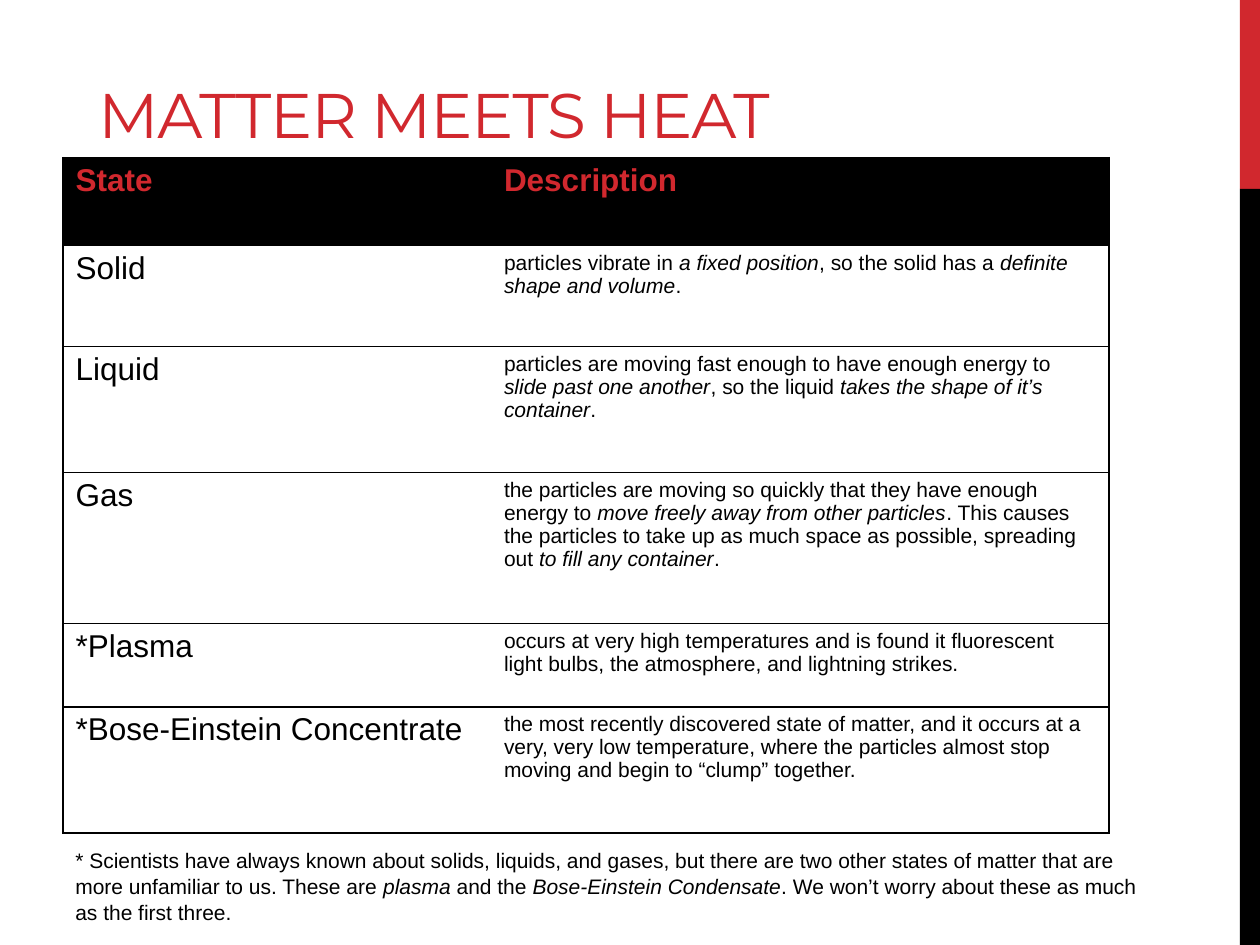
import pptx
import pptx.dml.color
import pptx.enum.shapes
import pptx.enum.text
import pptx.oxml
import pptx.oxml.ns
import pptx.util

Inches = pptx.util.Inches
RED, BLACK = "D1282E", "000000"
COLS = [3.4, 4.9]
ROWS = [
    (0.7, "State", "Description"),
    (0.8, "Solid", "particles vibrate in _a fixed position_, so the solid has a "
     "_definite shape and volume_."),
    (1, "Liquid", "particles are moving fast enough to have enough energy to "
     "_slide past one another_, so the liquid _takes the shape of it’s container_."),
    (1.2, "Gas", "the particles are moving so quickly that they have enough energy to "
     "_move freely away from other particles_. This causes the particles to take up "
     "as much space as possible, spreading out _to fill any container_."),
    (0.66, "*Plasma", "occurs at very high temperatures and is found it fluorescent "
     "light bulbs, the atmosphere, and lightning strikes."),
    (1, "*Bose-Einstein Concentrate", "the most recently discovered state of matter, "
     "and it occurs at a very, very low temperature, where the particles almost stop "
     "moving and begin to “clump” together."),
]
NOTE = ("* Scientists have always known about solids, liquids, and gases, but there are "
        "two other states of matter that are more unfamiliar to us. These are _plasma_ "
        "and the _Bose-Einstein Condensate_. We won’t worry about these as much as the "
        "first three.")


def color(code):
    return pptx.dml.color.RGBColor.from_string(code)


def write(frame, text, size=12, font="Arial", fill=BLACK, bold=False, gap=None, track=None):
    frame.word_wrap = True
    para = frame.paragraphs[0]
    para.alignment = pptx.enum.text.PP_ALIGN.LEFT
    para.line_spacing = gap
    for i, part in enumerate(text.split("_")):
        run = para.add_run()
        run.text = part
        run.font.size = pptx.util.Pt(size)
        run.font.name = font
        run.font.bold = bold
        run.font.italic = i % 2 == 1
        run.font.color.rgb = color(fill)
        if track is not None:
            run.font._element.set("spc", str(track))


def place(shape, left, top, width, height):
    shape.left, shape.top = Inches(left), Inches(top)
    shape.width, shape.height = Inches(width), Inches(height)


def bar(slide, top, height, fill):
    kind = pptx.enum.shapes.MSO_SHAPE.RECTANGLE
    shape = slide.shapes.add_shape(kind, Inches(9.84), Inches(top), Inches(0.16), Inches(height))
    shape.shadow.inherit = False
    shape.fill.solid()
    shape.fill.fore_color.rgb = color(fill)
    shape.line.fill.background()


def title(slide, text):
    shape = slide.shapes.title
    place(shape, 0.68, 0.42, 6.25, 0.83)
    frame = shape.text_frame
    frame.auto_size = pptx.enum.text.MSO_AUTO_SIZE.NONE
    frame.vertical_anchor = pptx.enum.text.MSO_ANCHOR.BOTTOM
    write(frame, text, size=36, font="Montserrat", fill=RED, track=-60)


def edge(cell, sides):
    props = cell._tc.get_or_add_tcPr()
    for side in "LRTB":
        if side in sides:
            paint = f'<a:solidFill><a:srgbClr val="{BLACK}"/></a:solidFill>'
        else:
            paint = "<a:noFill/>"
        space = pptx.oxml.ns.nsdecls("a")
        props.append(pptx.oxml.parse_xml(f'<a:ln{side} {space} w="12700">{paint}</a:ln{side}>'))


def table(slide):
    grid = slide.shapes.add_table(
        len(ROWS), len(COLS), Inches(0.5), Inches(1.25),
        Inches(sum(COLS)), Inches(sum(row[0] for row in ROWS))).table
    for col, width in zip(grid.columns, COLS):
        col.width = Inches(width)
    for r, (height, *texts) in enumerate(ROWS):
        grid.rows[r].height = Inches(height)
        head = r == 0
        for c, text in enumerate(texts):
            cell = grid.cell(r, c)
            edge(cell, "LTB" if c == 0 else "RTB")
            if head:
                cell.fill.solid()
                cell.fill.fore_color.rgb = color(BLACK)
            else:
                cell.fill.background()
            write(cell.text_frame, text, size=18 if head or c == 0 else 12,
                  fill=RED if head else BLACK, bold=head, gap=0.98)


def note(slide, text):
    box = slide.shapes.add_textbox(Inches(0.5), Inches(6.67), Inches(8.83), Inches(0.71))
    write(box.text_frame, text, gap=1.04)


def main():
    deck = pptx.Presentation()
    deck.slide_width, deck.slide_height = Inches(10), Inches(7.5)
    slide = deck.slides.add_slide(deck.slide_layouts[5])
    bar(slide, 0, 1.5, RED)
    bar(slide, 1.5, 6, BLACK)
    title(slide, "MATTER MEETS HEAT")
    note(slide, NOTE)
    table(slide)
    deck.save("out.pptx")


if __name__ == "__main__":
    main()
